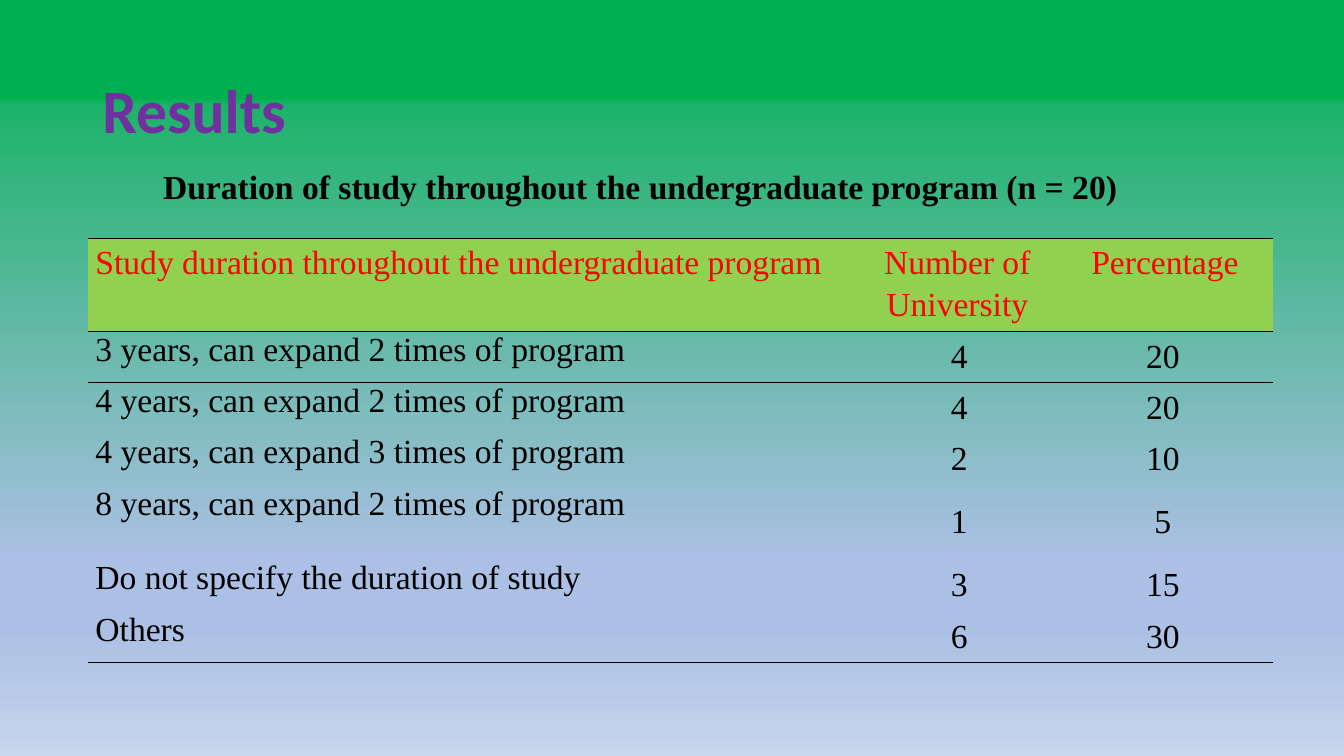
import pptx
import pptx.dml.color
import pptx.enum.text
import pptx.oxml
import pptx.oxml.ns
import pptx.util

Pt = pptx.util.Pt
ALIGN = pptx.enum.text.PP_ALIGN
ANCHOR = pptx.enum.text.MSO_ANCHOR
NS = pptx.oxml.ns.nsdecls("a")
SERIF = "Times New Roman"
PLAIN = "{2D5ABB26-0587-4C30-8999-92F81FD0307C}"  # no style, no grid

STOPS = [(13, "00B050"), (14, "1EB36A"), (74, "ABC0E4"),
         (83, "ABC0E4"), (100, "C7D5ED")]
WIDTHS = [550, 142, 154.8]
HEIGHTS = [66.2, 36.7, 36.7, 36.7, 53.3, 36.7, 36.7]
ROWS = [
    ("Study duration throughout the undergraduate program",
     "Number of University", "Percentage"),
    ("3 years, can expand 2 times of program", "4", "20 "),
    ("4 years, can expand 2 times of program", "4", "20 "),
    ("4 years, can expand 3 times of program", "2", "10 "),
    ("8 years, can expand 2 times of program", "1", "5 "),
    ("Do not specify the duration of study", "3", "15 "),
    ("Others", "6", "30 "),
]


def assign(item, values):
    for name, value in values.items():
        setattr(item, name, value)


def color(text):
    return pptx.dml.color.RGBColor.from_string(text)


def place(shape, left, top, width, height):
    assign(shape, {"left": Pt(left), "top": Pt(top),
                   "width": Pt(width), "height": Pt(height)})


def write(frame, text, tint, font, para):
    line = frame.paragraphs[0]
    assign(line, para)
    run = line.add_run()
    run.text = text
    assign(run.font, font)
    run.font.color.rgb = color(tint)
    return line


def paint(slide):
    fill = slide.background.fill
    fill.gradient()
    grad = slide.background._cSld.find(".//" + pptx.oxml.ns.qn("a:gradFill"))
    for child in list(grad):
        grad.remove(child)
    stops = "".join(f'<a:gs pos="{pos * 1000}"><a:srgbClr val="{tint}"/></a:gs>'
                    for pos, tint in STOPS)
    grad.append(pptx.oxml.parse_xml(f"<a:gsLst {NS}>{stops}</a:gsLst>"))
    grad.append(pptx.oxml.parse_xml(f'<a:lin {NS} ang="5400000" scaled="0"/>'))


def border(cell, side):
    cell._tc.get_or_add_tcPr().append(pptx.oxml.parse_xml(
        f'<a:ln{side} {NS} w="12700"><a:solidFill><a:srgbClr val="000000"/>'
        f'</a:solidFill></a:ln{side}>'))


def add_title(slide):
    title = slide.shapes.title
    place(title, 66, 28.8, 828, 104.4)
    title.text_frame.vertical_anchor = ANCHOR.MIDDLE
    write(title.text_frame, "Results", "7030A0",
          {"name": "Calibri", "size": Pt(44), "bold": True},
          {"alignment": ALIGN.LEFT, "line_spacing": 0.9})


def add_label(slide):
    box = slide.shapes.add_textbox(Pt(109.4), Pt(115.2), Pt(702.7), Pt(36))
    assign(box.text_frame, {
        "word_wrap": False, "vertical_anchor": ANCHOR.MIDDLE,
        "auto_size": pptx.enum.text.MSO_AUTO_SIZE.SHAPE_TO_FIT_TEXT})
    write(box.text_frame,
          "Duration of study throughout the undergraduate program (n = 20)",
          "000000", {"name": SERIF, "size": Pt(24), "bold": True},
          {"alignment": ALIGN.JUSTIFY})


def fill_cell(cell, text, row, col):
    head, count = row == 0, row > 0 and col > 0
    assign(cell, {"margin_left": Pt(5.4), "margin_right": Pt(5.4),
                  "margin_top": 0, "margin_bottom": 0,
                  "vertical_anchor": ANCHOR.MIDDLE if count else ANCHOR.TOP})
    # Rules above and below the heading, and under the last row
    if row <= 1:
        border(cell, "T")
    if row in (0, len(ROWS) - 1):
        border(cell, "B")
    if head:
        cell.fill.solid()
        cell.fill.fore_color.rgb = color("92D050")
    else:
        cell.fill.background()

    para = {"space_after": Pt(10),
            "alignment": ALIGN.CENTER if col else ALIGN.LEFT}
    if head:
        para["line_spacing"] = 1.15
        if col == 0:
            para["alignment"] = ALIGN.JUSTIFY
    line = write(cell.text_frame, text, "FF0000" if head else "000000",
                 {"name": SERIF, "size": Pt(24), "bold": False}, para)
    if count:
        line._p.get_or_add_pPr().set("marL", str(Pt(2.9)))


def add_grid(slide):
    table = slide.shapes.add_table(
        len(ROWS), len(WIDTHS), Pt(62.8), Pt(170.4),
        Pt(sum(WIDTHS)), Pt(sum(HEIGHTS))).table
    assign(table, {"first_row": False, "horz_banding": False})
    table._tbl.tblPr.find(pptx.oxml.ns.qn("a:tableStyleId")).text = PLAIN
    for col, width in zip(table.columns, WIDTHS):
        col.width = Pt(width)
    for row, height in zip(table.rows, HEIGHTS):
        row.height = Pt(height)
    for row, texts in enumerate(ROWS):
        for col, text in enumerate(texts):
            fill_cell(table.cell(row, col), text, row, col)


def main():
    deck = pptx.Presentation()
    assign(deck, {"slide_width": Pt(960), "slide_height": Pt(540)})
    slide = deck.slides.add_slide(deck.slide_layouts[5])
    paint(slide)
    add_title(slide)
    add_grid(slide)
    add_label(slide)
    deck.save("out.pptx")


if __name__ == "__main__":
    main()
